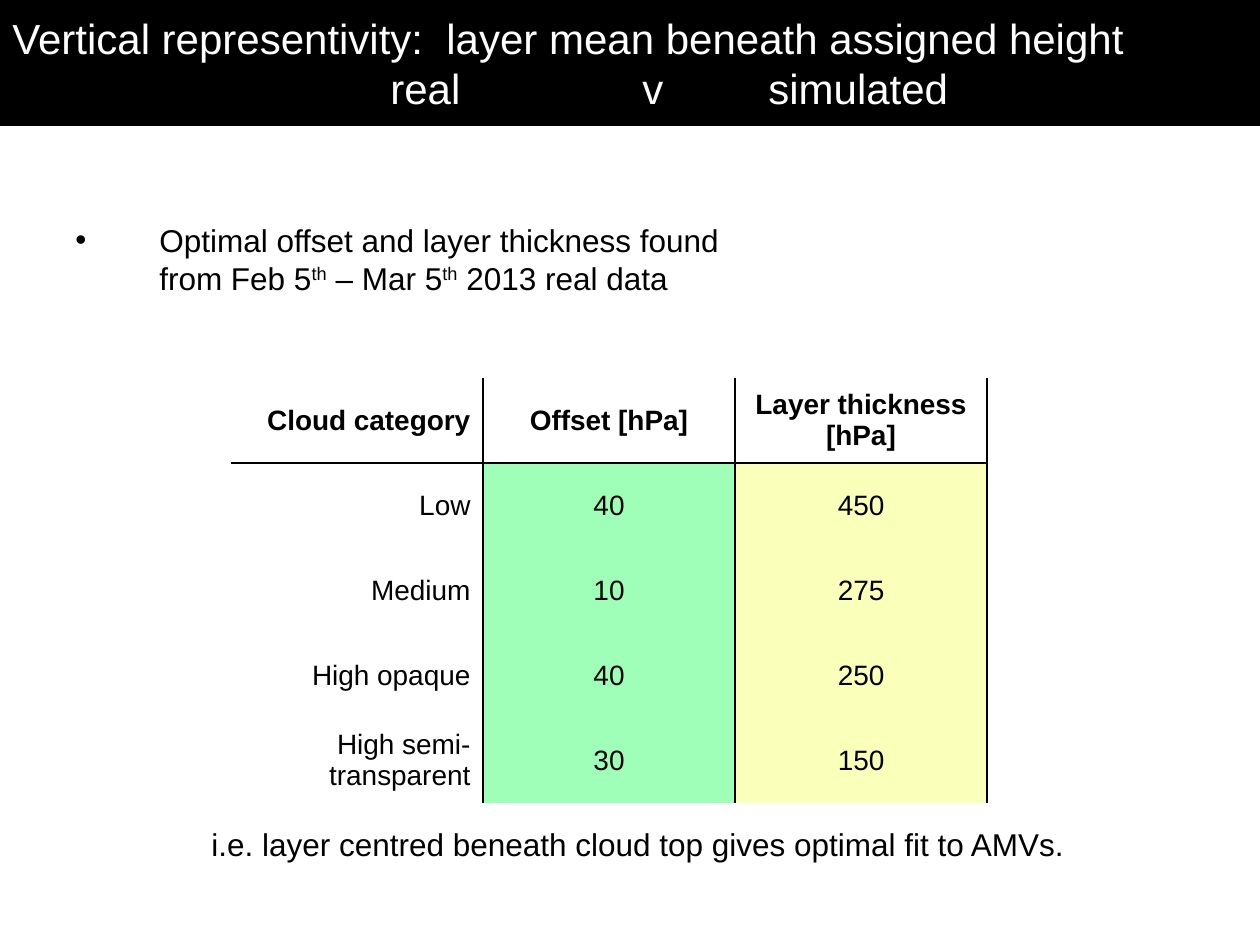
"""Build a slide comparing cloud layer offsets and thicknesses from real data."""
from dataclasses import dataclass

from lxml.etree import SubElement
from pptx import Presentation
from pptx.dml.color import RGBColor
from pptx.enum.shapes import MSO_SHAPE as Preset
from pptx.enum.text import MSO_ANCHOR as Anchor, PP_ALIGN as Align
from pptx.oxml.ns import qn
from pptx.util import Emu, Pt

PX = 914400 / 126
COLORS = {"black": "000000", "white": "FFFFFF", "offset": "9FFFB8", "thickness": "FAFFB9"}
FONT = "Arial"
SUPERSCRIPT = "th"


@dataclass(frozen=True)
class Box:
    left: int
    top: int
    width: int
    height: int

    def emu(self) -> list[Emu]:
        return [px(n) for n in (self.left, self.top, self.width, self.height)]


@dataclass(frozen=True)
class Column:
    heading: str
    values: tuple[str, ...]
    fill: str
    align: Align = Align.CENTER


TITLE = Box(0, 0, 1260, 126)
FINDING = Box(63, 168, 683, 157)
TABLE = Box(231, 378, 756, 425)
CONCLUSION = Box(199, 819, 903, 50)
TITLE_TABS = (378, 630, 756)
COLUMNS = (
    Column("Cloud category", ("Low", "Medium", "High opaque", "High semi-transparent"),
           "white", Align.RIGHT),
    Column("Offset [hPa]", ("40", "10", "40", "30"), "offset"),
    Column("Layer thickness [hPa]", ("450", "275", "250", "150"), "thickness"),
)


def px(length: int) -> Emu:
    return Emu(round(length * PX))


def rgb(name: str) -> RGBColor:
    return RGBColor.from_string(COLORS[name])


def write(frame, *pieces: str, size: int = 18, color: str = "black", bold: bool = False,
          align: Align = Align.LEFT, tabs: tuple[int, ...] = (), hang: int = 0):
    frame.word_wrap = True
    paragraph = frame.paragraphs[0]
    paragraph.alignment = align
    settings = paragraph._p.get_or_add_pPr()
    if hang:
        settings.set("marL", str(px(hang)))
        settings.set("indent", str(-px(hang)))
        SubElement(settings, qn("a:buFont"), typeface=FONT)
        SubElement(settings, qn("a:buChar"), char="•")
    if tabs:
        stops = SubElement(settings, qn("a:tabLst"))
        for stop in tabs:
            SubElement(stops, qn("a:tab"), pos=str(px(stop)), algn="l")
    for piece in pieces:
        if piece == "\n":
            paragraph.add_line_break()
            continue
        run = paragraph.add_run()
        run.text = piece
        run.font.name, run.font.size, run.font.bold = FONT, Pt(size), bold
        run.font.color.rgb = rgb(color)
        if piece == SUPERSCRIPT:
            run.font._element.set("baseline", "30000")


def set_borders(cell, drawn: set[str]):
    settings = cell._tc.get_or_add_tcPr()
    for index, side in enumerate(("lnL", "lnR", "lnT", "lnB")):
        border = settings.makeelement(qn(f"a:{side}"), {"w": str(Pt(1))})
        settings.insert(index, border)
        if side in drawn:
            fill = SubElement(border, qn("a:solidFill"))
            SubElement(fill, qn("a:srgbClr"), val=COLORS["black"])
        else:
            SubElement(border, qn("a:noFill"))


def draw_title(shapes):
    banner = shapes.add_shape(Preset.RECTANGLE, *TITLE.emu())
    banner.shadow.inherit = False
    banner.fill.solid()
    banner.fill.fore_color.rgb = rgb("black")
    banner.line.fill.background()
    banner.text_frame.vertical_anchor = Anchor.MIDDLE
    write(banner.text_frame, "Vertical representivity:  layer mean beneath assigned height",
          "\n", "\treal\tv\tsimulated", size=24, color="white", tabs=TITLE_TABS)


def draw_table(shapes, columns: tuple[Column, ...]):
    row_count = len(columns[0].values) + 1
    table = shapes.add_table(row_count, len(columns), *TABLE.emu()).table
    table.first_row = table.horz_banding = False
    for row in table.rows:
        row.height = px(TABLE.height // row_count)
    for c, column in enumerate(columns):
        table.columns[c].width = px(TABLE.width // len(columns))
        for r, entry in enumerate((column.heading, *column.values)):
            cell = table.cell(r, c)
            cell.vertical_anchor = Anchor.MIDDLE
            cell.fill.solid()
            cell.fill.fore_color.rgb = rgb(column.fill if r else "white")
            write(cell.text_frame, entry, size=16, bold=r == 0, align=column.align)
            drawn = {"lnR"} | ({"lnL"} if c else set())
            drawn |= {0: {"lnB"}, 1: {"lnT"}}.get(r, set())
            set_borders(cell, drawn)


def main():
    deck = Presentation()
    deck.slide_width, deck.slide_height = px(1260), px(945)
    shapes = deck.slides.add_slide(deck.slide_layouts[6]).shapes
    finding = shapes.add_textbox(*FINDING.emu()).text_frame
    finding.margin_top = px(53)
    write(finding, "Optimal offset and layer thickness found from Feb 5", SUPERSCRIPT,
          " – Mar 5", SUPERSCRIPT, " 2013 real data", hang=84)
    draw_title(shapes)
    draw_table(shapes, COLUMNS)
    conclusion = shapes.add_textbox(*CONCLUSION.emu()).text_frame
    write(conclusion, "i.e. layer centred beneath cloud top gives optimal fit to AMVs.")
    deck.save("out.pptx")


if __name__ == "__main__":
    main()
